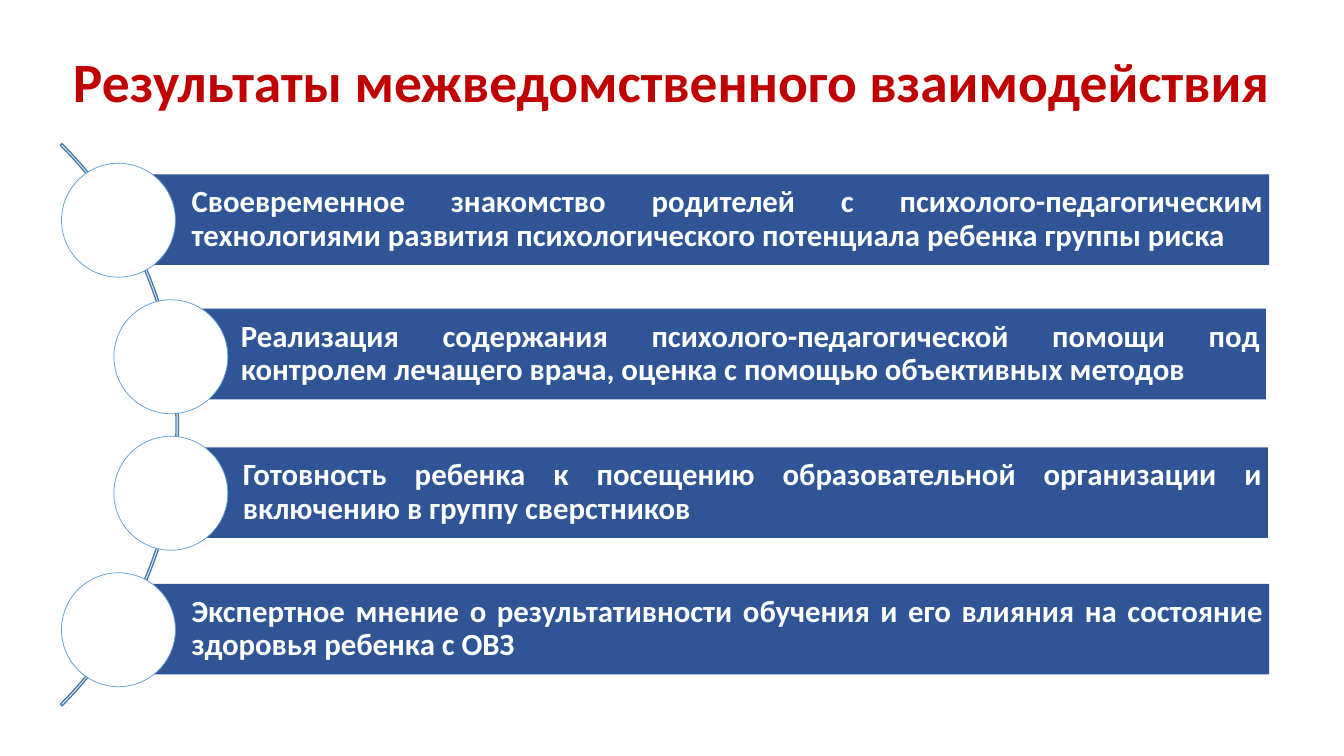
from dataclasses import dataclass

from pptx import Presentation
from pptx.dml.color import RGBColor
from pptx.enum.shapes import MSO_SHAPE
from pptx.enum.text import MSO_ANCHOR, PP_ALIGN
from pptx.util import Emu, Inches, Pt

RECT, OVAL, ARC = MSO_SHAPE.RECTANGLE, MSO_SHAPE.OVAL, MSO_SHAPE.BLOCK_ARC
CENTER, JUSTIFY = PP_ALIGN.CENTER, PP_ALIGN.JUSTIFY
MIDDLE = MSO_ANCHOR.MIDDLE
COLS, ROWS = 128, 72


@dataclass(frozen=True)
class Theme:
    font: str = "Calibri"
    title: str = "C00000"
    bar: str = "2F5597"
    light: str = "FFFFFF"
    arc_line: str = "497CAB"
    circle_line: str = "5B9BD5"
    title_size: float = 39.6
    body_size: float = 22
    line_spacing: float = 0.9


class SlideBuilder:
    def __init__(self, prs, theme):
        self.theme = theme
        self.s = prs.slides.add_slide(prs.slide_layouts[6])
        self.col = prs.slide_width / COLS
        self.row = prs.slide_height / ROWS

    def box(self, x, y, w, h):
        """Turn columns and rows into slide lengths."""
        return (Emu(round(x * self.col)), Emu(round(y * self.row)),
                Emu(round(w * self.col)), Emu(round(h * self.row)))

    def shape(self, kind, x, y, w, h, fill=None, line=None, width=1):
        sp = self.s.shapes.add_shape(kind, *self.box(x, y, w, h))
        sp.shadow.inherit = False
        if fill:
            sp.fill.solid()
            sp.fill.fore_color.rgb = RGBColor.from_string(fill)
        else:
            sp.fill.background()
        if line:
            sp.line.color.rgb = RGBColor.from_string(line)
            sp.line.width = Pt(width)
        else:
            sp.line.fill.background()
        return sp

    def text(self, sp, text, size, color, align):
        tf = sp.text_frame
        tf.word_wrap = True
        tf.vertical_anchor = MIDDLE
        p = tf.paragraphs[0]
        p.alignment = align
        p.line_spacing = self.theme.line_spacing
        r = p.add_run()
        r.text = text
        r.font.name = self.theme.font
        r.font.size = Pt(size)
        r.font.bold = True
        r.font.color.rgb = RGBColor.from_string(color)
        return tf

    def title(self, text, x, y, w, h):
        sp = self.s.shapes.add_textbox(*self.box(x, y, w, h))
        self.text(sp, text, self.theme.title_size, self.theme.title, CENTER)

    def arc(self, x, y, size):
        sp = self.shape(ARC, x, y, size, size, line=self.theme.arc_line)
        # Start and end angles (315° and 45°), then ring thickness
        for i, value in enumerate((189, 27, 0.003)):
            sp.adjustments[i] = value

    def bar(self, text, x, y, w, h):
        sp = self.shape(RECT, x, y, w, h, fill=self.theme.bar)
        tf = self.text(sp, text, self.theme.body_size, self.theme.light, JUSTIFY)
        tf.margin_left = Inches(0.72)
        tf.margin_top = tf.margin_right = tf.margin_bottom = Inches(0.06)

    def circle(self, x, y, size):
        self.shape(OVAL, x, y, size, size, self.theme.light,
                   self.theme.circle_line, 0.5)


# Each result: text, bar left, bar width, bar top shift, circle left
RESULTS = [
    ("Своевременное знакомство родителей с психолого-педагогическим "
     "технологиями развития психологического потенциала ребенка группы риска",
     11.33, 109.54, 0, 5.86),
    ("Реализация содержания психолого-педагогической помощи под "
     "контролем лечащего врача, оценка с помощью объективных методов",
     16.03, 104.54, -0.2, 10.85),
    ("Готовность ребенка к посещению образовательной организации и "
     "включению в группу сверстников",
     16.22, 104.54, 0, 10.85),
    ("Экспертное мнение о результативности обучения и его влияния на "
     "состояние здоровья ребенка с ОВЗ",
     11.33, 109.54, 0, 5.86),
]
PITCH, BAR_TOP, BAR_H = 13, 16.6, 8.64
CIRCLE_TOP, CIRCLE_SIZE = 15.55, 10.85


def main():
    prs = Presentation()
    prs.slide_width, prs.slide_height = Inches(13.33), Inches(7.5)
    slide = SlideBuilder(prs, Theme())

    # Heading
    slide.title("Результаты межведомственного взаимодействия",
                4.9, 3.65, 118.1, 8.74)

    # Curve behind the list
    slide.arc(-58.75, 2.59, 75.74)

    # Bars with their circles
    for i, (text, left, width, shift, circle_left) in enumerate(RESULTS):
        step = i * PITCH
        slide.bar(text, left, BAR_TOP + step + shift, width, BAR_H)
        slide.circle(circle_left, CIRCLE_TOP + step, CIRCLE_SIZE)

    prs.save("out.pptx")


if __name__ == "__main__":
    main()
